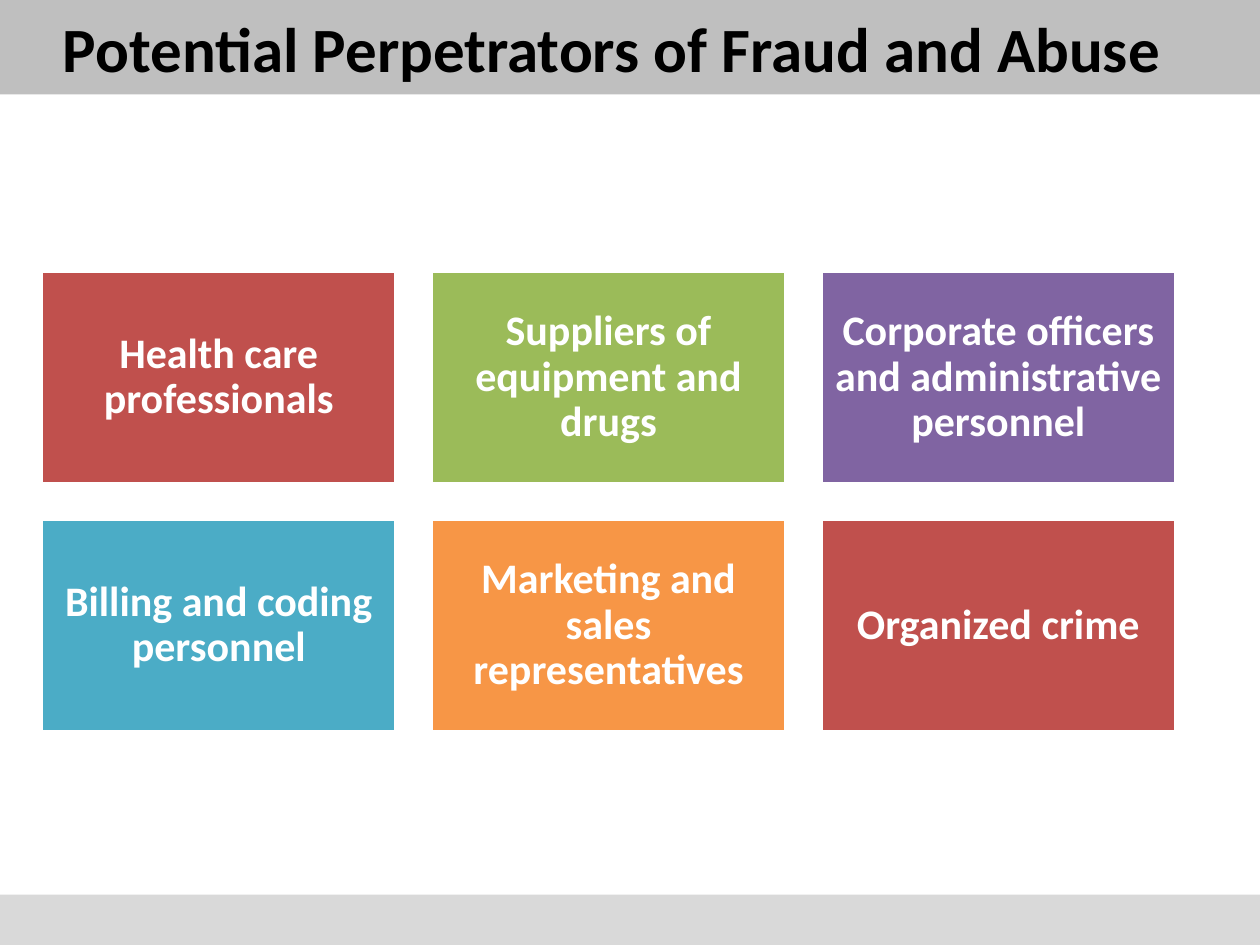
from pptx import Presentation
from pptx.dml.color import RGBColor
from pptx.enum.shapes import MSO_SHAPE
from pptx.enum.text import MSO_ANCHOR, PP_ALIGN
from pptx.util import Inches, Pt

RECT = MSO_SHAPE.RECTANGLE
MIDDLE = MSO_ANCHOR.MIDDLE
CENTER = PP_ALIGN.CENTER

COLORS = {
    "title_bar": "BFBFBF",
    "footer_bar": "D9D9D9",
    "black": "000000",
    "white": "FFFFFF",
    "red": "C0504D",
    "green": "9BBB59",
    "purple": "8064A2",
    "teal": "4BACC6",
    "orange": "F79646",
}
TITLE_FONT = {"name": "Calibri", "size": Pt(36), "bold": True}
CARD_FONT = {"name": "Calibri", "size": Pt(24), "bold": True}
CARD_FRAME = {
    "margin_left": Inches(0.1),
    "margin_top": Inches(0.1),
    "margin_right": Inches(0.1),
    "margin_bottom": Inches(0.1),
}
CARD_PARAGRAPH = {"line_spacing": 0.9}
PERPETRATORS = [
    ("Health care professionals", "red"),
    ("Suppliers of equipment and drugs", "green"),
    ("Corporate officers and administrative personnel", "purple"),
    ("Billing and coding personnel", "teal"),
    ("Marketing and sales representatives", "orange"),
    ("Organized crime", "red"),
]


def rgb(name):
    """Return the named colour."""
    return RGBColor.from_string(COLORS[name])


def apply(obj, values):
    """Set each attribute of an object from a dict."""
    for key, value in values.items():
        setattr(obj, key, value)


def add_bar(s, box, fill):
    """Add a plain filled rectangle without outline or shadow."""
    sp = s.shapes.add_shape(RECT, *(Inches(v) for v in box))
    sp.shadow.inherit = False
    sp.fill.solid()
    sp.fill.fore_color.rgb = rgb(fill)
    sp.line.fill.background()
    return sp


def write_text(sp, text, font, color, frame=None, paragraph=None):
    """Write one centred paragraph in the middle of a shape."""
    tf = sp.text_frame
    apply(tf, {"word_wrap": True, "vertical_anchor": MIDDLE, **(frame or {})})
    p = tf.paragraphs[0]
    apply(p, {"alignment": CENTER, **(paragraph or {})})
    r = p.add_run()
    r.text = text
    apply(r.font, font)
    r.font.color.rgb = rgb(color)


def add_title(s, box):
    """Add the title bar with its heading."""
    sp = add_bar(s, box, "title_bar")
    write_text(sp, "Potential Perpetrators of Fraud and Abuse\t", TITLE_FONT, "black")


def add_cards(s, box, cards, cols=3, gap=0.28):
    """Fill a box with a grid of coloured cards at equal gaps."""
    left, top, width, height = box
    rows = -(-len(cards) // cols)
    w = (width - gap * (cols - 1)) / cols
    h = (height - gap * (rows - 1)) / rows
    for i, (text, fill) in enumerate(cards):
        row, col = divmod(i, cols)
        cell = (left + col * (w + gap), top + row * (h + gap), w, h)
        sp = add_bar(s, cell, fill)
        sp.line.color.rgb = rgb("white")
        sp.line.width = Pt(2)
        write_text(sp, text, CARD_FONT, "white", CARD_FRAME, CARD_PARAGRAPH)


def main():
    """Build and save the slide."""
    prs = Presentation()
    prs.slide_width, prs.slide_height = Inches(10), Inches(7.5)
    s = prs.slides.add_slide(prs.slide_layouts[6])
    add_title(s, (0, 0, 10, 0.75))
    add_cards(s, (0.33, 2.15, 9, 3.66), PERPETRATORS)
    add_bar(s, (0, 7.1, 10, 0.4), "footer_bar")
    prs.save("out.pptx")


if __name__ == "__main__":
    main()
